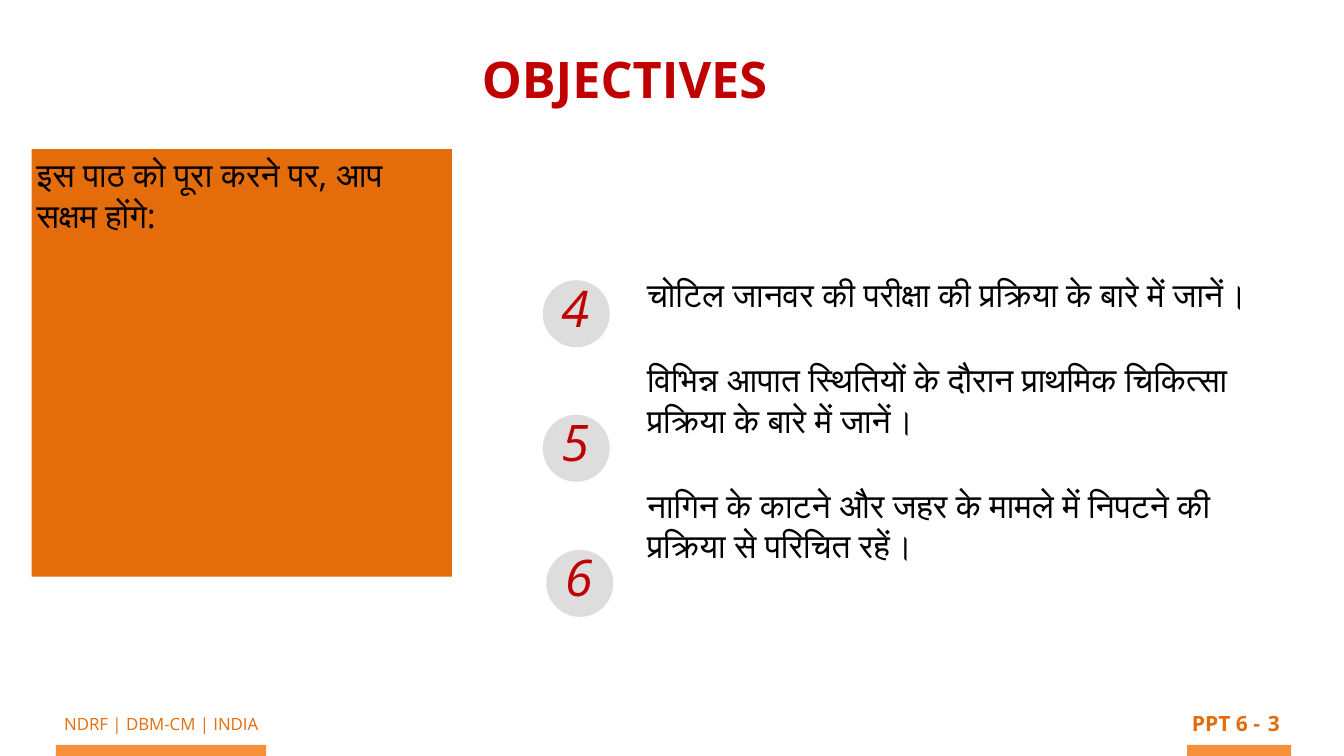
import pptx
import pptx.util
import pptx.dml.color
import pptx.enum.shapes
import pptx.enum.text

Inches = pptx.util.Inches
Pt = pptx.util.Pt
RGBColor = pptx.dml.color.RGBColor
Shape = pptx.enum.shapes.MSO_SHAPE
Align = pptx.enum.text.PP_ALIGN

ORANGE = RGBColor(0xE4, 0x6C, 0x0A)
LIGHT_ORANGE = RGBColor(0xF7, 0x90, 0x3B)
RED = RGBColor(0xC0, 0x00, 0x00)
GREY = RGBColor(0xDD, 0xDD, 0xDD)
BLACK = RGBColor(0x00, 0x00, 0x00)
FONT_NAME = "Open Sans"


def write_text(box, text, size, color, bold=False, italic=False,
               align=Align.LEFT, wrap=False, inset=0.09, gap=0):
    frame = box.text_frame
    frame.auto_size = pptx.enum.text.MSO_AUTO_SIZE.NONE
    frame.word_wrap = wrap
    frame.vertical_anchor = pptx.enum.text.MSO_ANCHOR.TOP
    frame.margin_left = frame.margin_right = Inches(inset)
    frame.margin_top = frame.margin_bottom = Inches(inset)
    for index, line in enumerate(text.split("\n")):
        para = frame.add_paragraph() if index else frame.paragraphs[0]
        para.alignment = align
        para.space_before = Pt(gap if index else 0)
        span = para.add_run()
        span.text = line
        span.font.name = FONT_NAME
        span.font.size = Pt(size)
        span.font.bold = bold
        span.font.italic = italic
        span.font.color.rgb = color


def add_filled(kind, left, top, width, height, color):
    shape = page.shapes.add_shape(
        kind, Inches(left), Inches(top), Inches(width), Inches(height))
    shape.shadow.inherit = False
    shape.fill.solid()
    shape.fill.fore_color.rgb = color
    shape.line.fill.background()
    return shape


deck = pptx.Presentation()
deck.slide_width = Inches(26.67)
deck.slide_height = Inches(15)
page = deck.slides.add_slide(deck.slide_layouts[5])

title = page.shapes.title
title.left, title.top = Inches(9.47), Inches(0.86)
title.width, title.height = Inches(5.85), Inches(1.53)
write_text(title, "OBJECTIVES", size=72, color=RED, bold=True)

for left, width in [(1.11, 4.17), (23.56, 2.06)]:
    add_filled(Shape.RECTANGLE, left, 14.78, width, 0.22, LIGHT_ORANGE)

footers = [
    ("NDRF | DBM-CM | INDIA", 0.66, 14.08, 5.08, 0.58, 24, False),
    ("PPT 6 -", 23.56, 14.01, 1.54, 0.68, 30, True),
    ("3", 25.07, 14.01, 0.42, 0.74, 30, True),
]
for text, left, top, width, height, size, bold in footers:
    footer = page.shapes.add_textbox(
        Inches(left), Inches(top), Inches(width), Inches(height))
    write_text(footer, text, size=size, color=ORANGE, bold=bold, align=Align.CENTER)

intro = add_filled(Shape.RECTANGLE, 0.63, 2.96, 8.34, 8.48, ORANGE)
write_text(intro, "इस पाठ को पूरा करने पर, आप सक्षम होंगे:",
           size=48, color=BLACK, wrap=True, inset=0.1)

objectives = [
    "चोटिल जानवर की परीक्षा की प्रक्रिया के बारे में जानें।",
    "विभिन्न आपात स्थितियों के दौरान प्राथमिक चिकित्सा प्रक्रिया के बारे में जानें।",
    "नागिन के काटने और जहर के मामले में निपटने की प्रक्रिया से परिचित रहें।",
]
objective_box = page.shapes.add_textbox(
    Inches(12.75), Inches(5.35), Inches(12.77), Inches(7.2))
write_text(objective_box, "\n".join(objectives),
           size=48, color=BLACK, wrap=True, gap=64)

for number, left, top in [("4", 10.77, 5.56), ("5", 10.77, 8.23), ("6", 10.84, 10.91)]:
    add_filled(Shape.OVAL, left, top, 1.33, 1.33, GREY)
    number_box = page.shapes.add_textbox(
        Inches(left + 0.28), Inches(top - 0.16), Inches(0.9), Inches(1.84))
    write_text(number_box, number, size=72, color=RED, italic=True, wrap=True)

deck.save("out.pptx")
